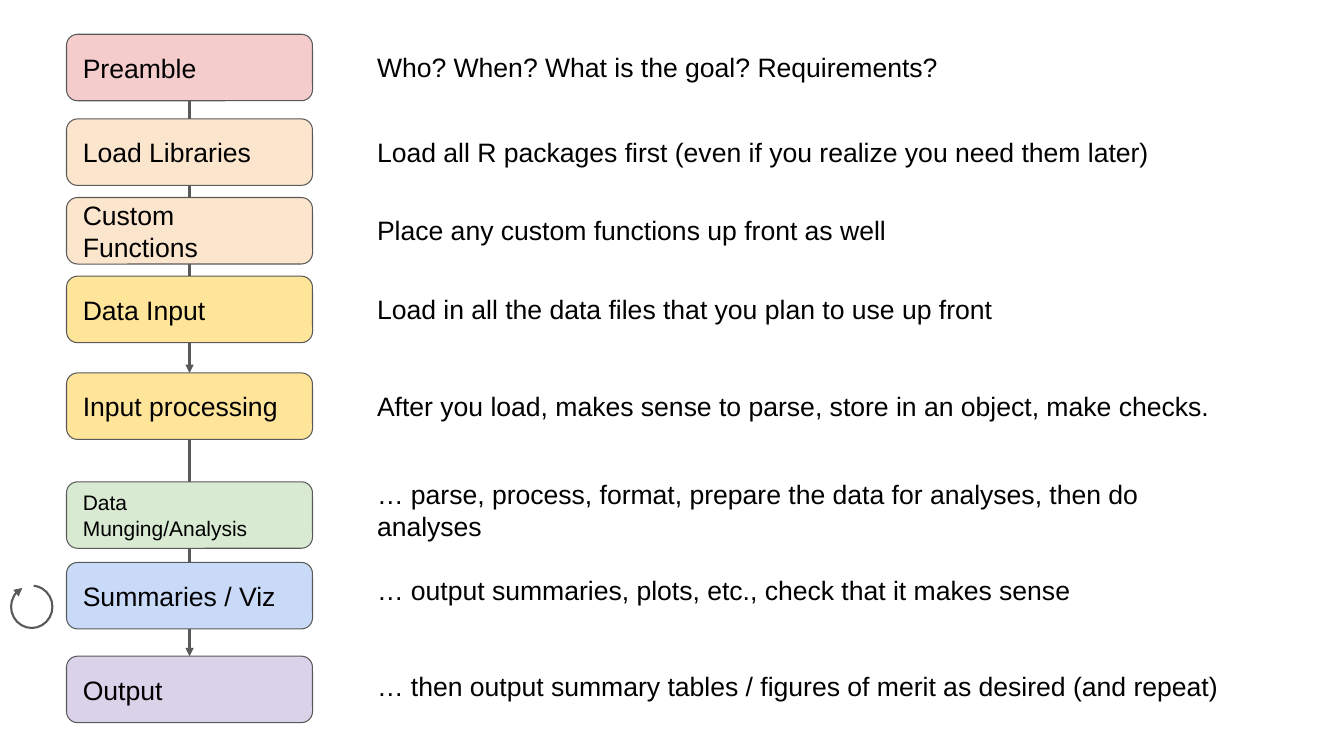
"""Build a slide showing the order of sections in a data analysis script."""
from lxml.etree import SubElement
from pptx import Presentation
from pptx.dml.color import RGBColor
from pptx.enum.shapes import MSO_CONNECTOR as Connector, MSO_SHAPE as Shape
from pptx.enum.text import MSO_ANCHOR as Anchor, MSO_AUTO_SIZE as AutoSize, PP_ALIGN as Align
from pptx.oxml.ns import qn
from pptx.util import Inches, Pt

STEPS = [
    ("Preamble", 0.34, "F4CCCC", 19),
    ("Load Libraries", 1.18, "FCE5CD", 19),
    ("Custom Functions", 1.96, "FCE5CD", 19),
    ("Data Input", 2.74, "FFE599", 19),
    ("Input processing", 3.7, "FFE599", 19),
    ("Data Munging/Analysis", 4.78, "D9EAD3", 15),
    ("Summaries / Viz", 5.58, "C9DAF8", 19),
    ("Output", 6.51, "D9D2E9", 19),
]
STEP_NOTES = [
    "Who? When? What is the goal? Requirements?",
    "Load all R packages first (even if you realize you need them later)",
    "Place any custom functions up front as well",
    "Load in all the data files that you plan to use up front",
    "After you load, makes sense to parse, store in an object, make checks.",
]
CYCLE_NOTES = [
    ("… parse, process, format, prepare the data for analyses, then do analyses", 0),
    ("… output summaries, plots, etc., check that it makes sense", 23),
    ("… then output summary tables / figures of merit as desired (and repeat)", 46),
]
ARROWS = [(4, 7), (0, 4)]
STEP_LEFT, STEP_WIDTH, STEP_HEIGHT = 0.66, 2.44, 0.66
NOTE_LEFT, NOTE_WIDTH, NOTE_HEIGHT = 3.61, 8.9, 0.59
CYCLE_TOP, CYCLE_HEIGHT = 4.61, 2.51
LOOP_BOX = (0.11, 5.81, 0.41, 0.42)
LOOP_ANGLES = (165.205, 146.239)
INSET = 0.13
GREY = "595959"


def color(value):
    """Turn a hex string into a colour."""
    return RGBColor.from_string(value)


def inches(*lengths):
    """Turn numbers into lengths in inches."""
    return [Inches(length) for length in lengths]


def write(shape, lines, size=19, anchor=Anchor.TOP):
    """Fill a shape with (text, space before) lines."""
    frame = shape.text_frame
    frame.word_wrap = True
    frame.vertical_anchor = anchor
    frame.margin_left = frame.margin_right = Inches(INSET)
    frame.margin_top = frame.margin_bottom = Inches(INSET)
    for index, (text, gap) in enumerate(lines):
        para = frame.add_paragraph() if index else frame.paragraphs[0]
        para.alignment = Align.LEFT
        para.space_before = Pt(gap)
        span = para.add_run()
        span.text = text
        span.font.name = "Arial"
        span.font.size = Pt(size)
        span.font.color.rgb = color("000000")


def outline(shape, width, arrow=False):
    """Draw a grey line, with an arrowhead at its end if asked."""
    shape.line.color.rgb = color(GREY)
    shape.line.width = Pt(width)
    if arrow:
        SubElement(shape.line._get_or_add_ln(), qn("a:tailEnd"), type="triangle")


def add_arrow(page, start, end):
    """Connect the bottom of one step to the top of a later one."""
    middle = STEP_LEFT + STEP_WIDTH / 2
    ends = inches(middle, STEPS[start][1] + STEP_HEIGHT, middle, STEPS[end][1])
    arrow = page.shapes.add_connector(Connector.STRAIGHT, *ends)
    outline(arrow, 1.5, arrow=True)
    SubElement(arrow._element.spPr, qn("a:effectLst"))


def add_step(page, name, top, fill, size):
    """Add one rounded step box."""
    place = inches(STEP_LEFT, top, STEP_WIDTH, STEP_HEIGHT)
    box = page.shapes.add_shape(Shape.ROUNDED_RECTANGLE, *place)
    box.shadow.inherit = False
    box.fill.solid()
    box.fill.fore_color.rgb = color(fill)
    outline(box, 0.75)
    write(box, [(name, 0)], size=size, anchor=Anchor.MIDDLE)


def add_loop(page):
    """Add the circular arrow beside the summaries step."""
    loop = page.shapes.add_shape(Shape.ARC, *inches(*LOOP_BOX))
    loop.shadow.inherit = False
    loop.fill.background()
    for index, angle in enumerate(LOOP_ANGLES):
        loop.adjustments[index] = angle
    outline(loop, 1.5, arrow=True)


def add_note(page, top, height, lines):
    """Add an explanation to the right of the steps."""
    note = page.shapes.add_textbox(*inches(NOTE_LEFT, top, NOTE_WIDTH, height))
    write(note, lines)
    note.text_frame.auto_size = AutoSize.SHAPE_TO_FIT_TEXT


def main():
    """Build and save the deck."""
    deck = Presentation()
    deck.slide_width, deck.slide_height = inches(13.33, 7.5)
    page = deck.slides.add_slide(deck.slide_layouts[6])
    for start, end in ARROWS:
        add_arrow(page, start, end)
    for step in STEPS:
        add_step(page, *step)
    add_loop(page)
    for (_, top, _, _), text in zip(STEPS, STEP_NOTES):
        add_note(page, top + (STEP_HEIGHT - NOTE_HEIGHT) / 2, NOTE_HEIGHT, [(text, 0)])
    add_note(page, CYCLE_TOP, CYCLE_HEIGHT, CYCLE_NOTES)
    deck.save("out.pptx")


if __name__ == "__main__":
    main()
